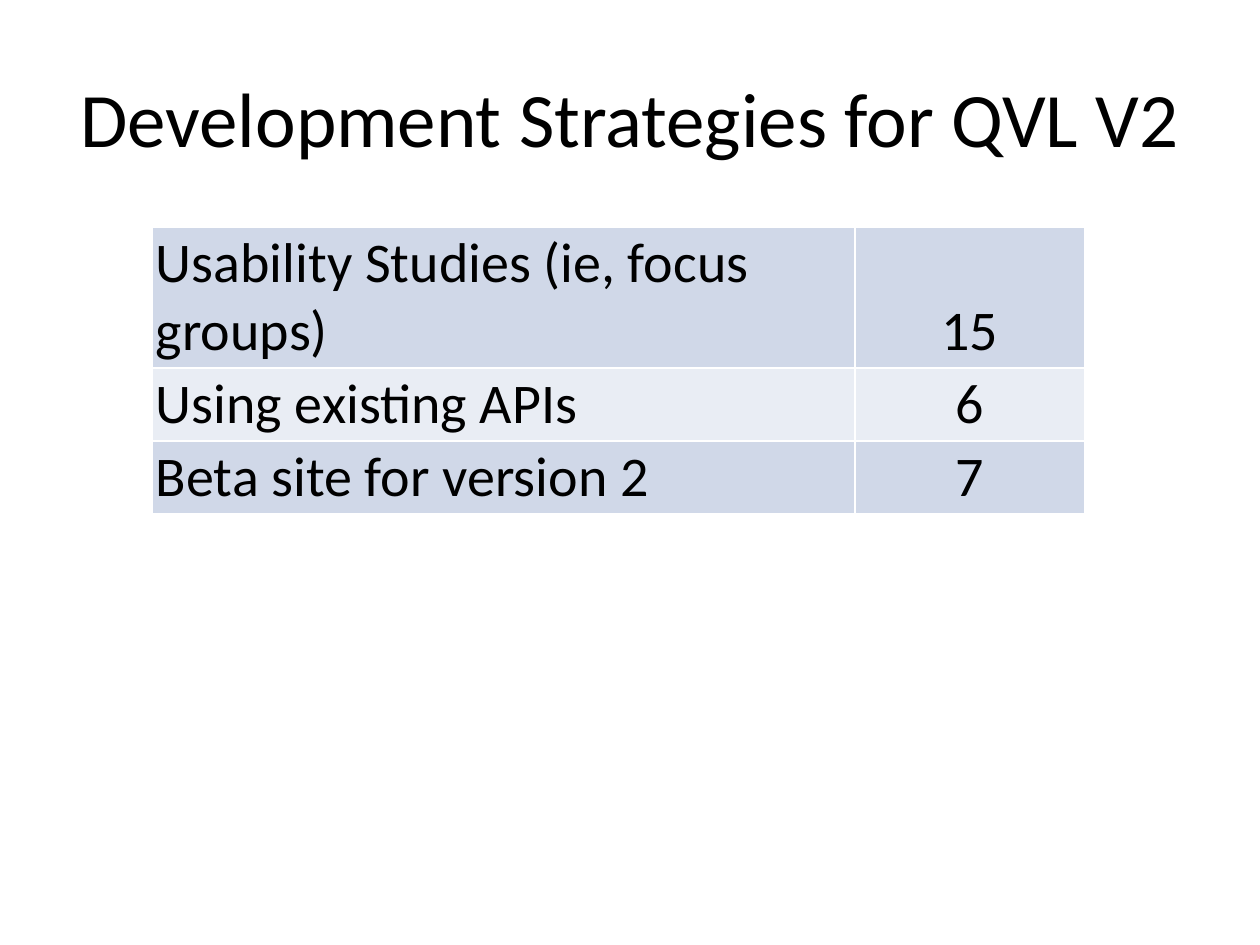
"""Build the development strategies slide with its table of counts."""
from pptx import Presentation
from pptx.dml.color import RGBColor
from pptx.enum.text import MSO_ANCHOR, PP_ALIGN
from pptx.util import Emu, Pt


def px(pixels):
    return Emu(round(pixels * 914400 / 126))


def style_text(frame, size, align):
    paragraph = frame.paragraphs[0]
    paragraph.alignment = align
    font = paragraph.runs[0].font
    font.name = "Calibri"
    font.size = Pt(size)
    font.color.rgb = RGBColor.from_string("000000")


deck = Presentation()
deck.slide_width, deck.slide_height = px(1260), px(945)
page = deck.slides.add_slide(deck.slide_layouts[5])

title = page.shapes.title
title.left, title.top, title.width, title.height = px(63), px(38), px(1134), px(157)
title.text_frame.text = "Development Strategies for QVL V2"
title.text_frame.vertical_anchor = MSO_ANCHOR.MIDDLE
style_text(title.text_frame, 44, PP_ALIGN.CENTER)

strategies = [
    ("Usability Studies (ie, focus groups)", "15"),
    ("Using existing APIs", "6"),
    ("Beta site for version 2", "7"),
]
column_widths = [703, 230]
row_heights = [141, 73, 73]
alignments = [PP_ALIGN.LEFT, PP_ALIGN.CENTER]
band_colors = ["D0D8E8", "E9EDF4"]

table = page.shapes.add_table(
    len(strategies), len(column_widths), px(152), px(227),
    px(sum(column_widths)), px(sum(row_heights))).table
table.first_row = False
for column, width in zip(table.columns, column_widths):
    column.width = px(width)

for row_index, strategy in enumerate(strategies):
    table.rows[row_index].height = px(row_heights[row_index])
    for column_index, text in enumerate(strategy):
        cell = table.cell(row_index, column_index)
        cell.margin_left = cell.margin_right = px(4)
        cell.margin_top = cell.margin_bottom = px(2)
        cell.vertical_anchor = MSO_ANCHOR.BOTTOM
        cell.fill.solid()
        cell.fill.fore_color.rgb = RGBColor.from_string(band_colors[row_index % 2])
        cell.text_frame.text = text
        style_text(cell.text_frame, 32, alignments[column_index])

deck.save("out.pptx")
